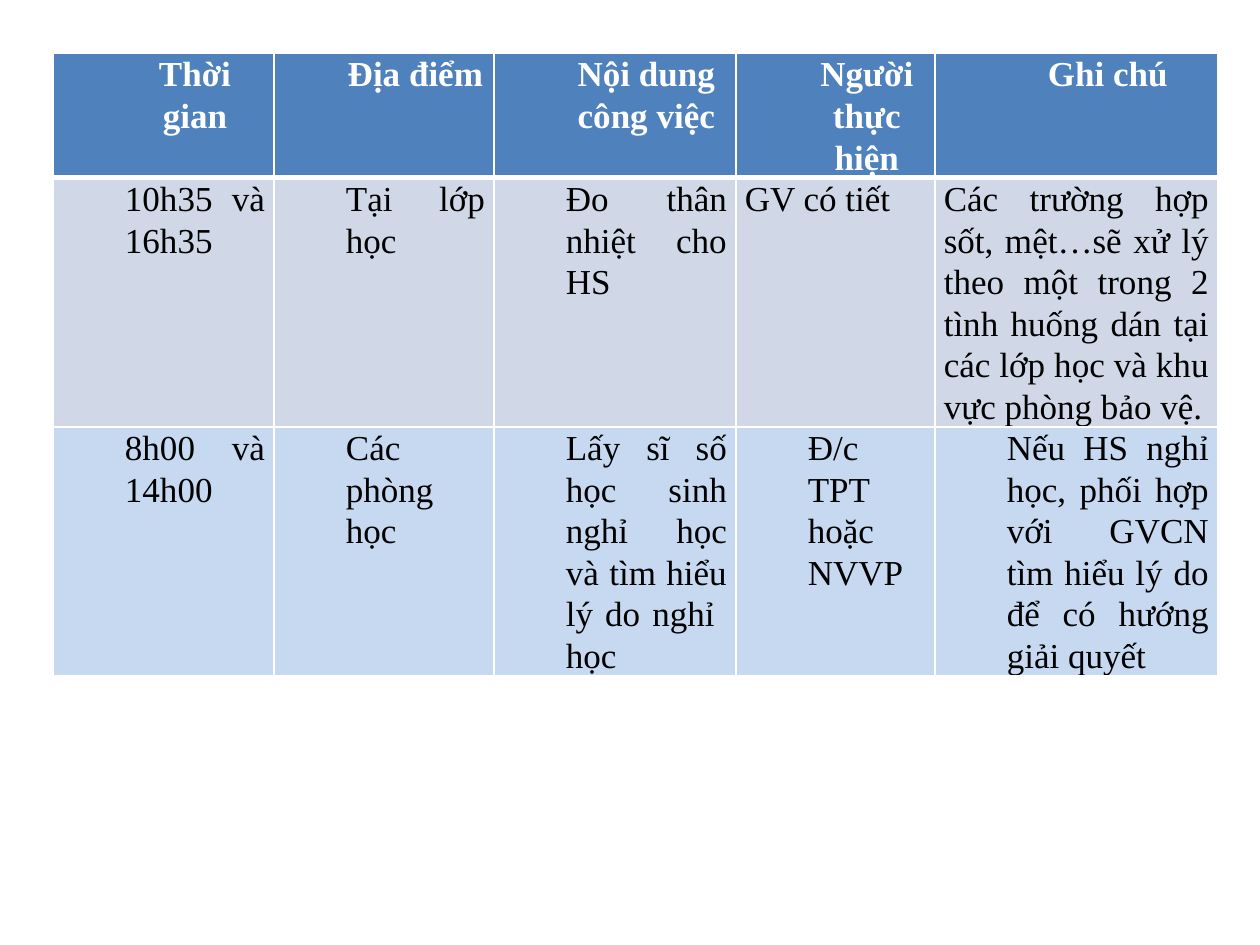
from lxml import etree
from pptx import Presentation
from pptx import util as u
from pptx.dml.color import RGBColor
from pptx.enum import text
from pptx.oxml import ns

PX = u.Inches(1) // 126
WHITE = RGBColor(0xFF, 0xFF, 0xFF)
BLACK = RGBColor(0, 0, 0)
HEADER_BLUE = RGBColor(0x4F, 0x81, 0xBD)
GREY_BLUE = RGBColor(0xD0, 0xD8, 0xE8)
PALE_BLUE = RGBColor(0xC6, 0xD9, 0xF1)

CENTER, JUSTIFY = text.PP_ALIGN.CENTER, text.PP_ALIGN.JUSTIFY
INDENT = 63
COLUMN_WIDTHS = [221, 220, 242, 199, 283]
ROW_HEIGHTS = [66, 52, 52]
ROW_FILLS = [HEADER_BLUE, GREY_BLUE, PALE_BLUE]
SCHEDULE = [
    ["Thời gian", "Địa điểm", "Nội dung công việc", "Người thực hiện", "Ghi chú"],
    ["10h35 và 16h35", "Tại lớp học", "Đo thân nhiệt cho HS", "GV có tiết",
     "Các trường hợp sốt, mệt…sẽ xử lý theo một trong 2 tình huống dán tại "
     "các lớp học và khu vực phòng bảo vệ."],
    ["8h00 và 14h00", "Các phòng học", "Lấy sĩ số học sinh nghỉ học và tìm hiểu lý do nghỉ  học",
     "Đ/c TPT hoặc NVVP",
     "Nếu HS nghỉ học, phối hợp với GVCN tìm hiểu lý do để có hướng giải quyết"],
]
# Cells without the usual indent: (row, column) -> alignment, spacing in points
FLUSH_CELLS = {(1, 3): (text.PP_ALIGN.LEFT, 0), (1, 4): (JUSTIFY, 3)}


class SlideBuilder:
    font = "Times New Roman"
    size = u.Pt(20)

    def __init__(self, slide):
        self.slide = slide

    def table(self, left, top, height, widths, heights):
        shape = self.slide.shapes.add_table(
            len(heights), len(widths), left * PX, top * PX, sum(widths) * PX, height * PX)
        for column, width in zip(shape.table.columns, widths):
            column.width = width * PX
        for row, row_height in zip(shape.table.rows, heights):
            row.height = row_height * PX
        shape.height = height * PX
        return shape.table

    def borders(self, cell, color, **widths):
        properties = cell._tc.get_or_add_tcPr()
        for side in "LRTB":
            line = etree.SubElement(properties, ns.qn(f"a:ln{side}"),
                                    w=str(u.Pt(widths.get(side, 1))))
            fill = etree.SubElement(line, ns.qn("a:solidFill"))
            etree.SubElement(fill, ns.qn("a:srgbClr"), val=str(color))

    def cell(self, cell, words, fill, color, bold, alignment, indent, spacing):
        cell.fill.solid()
        cell.fill.fore_color.rgb = fill
        cell.margin_left = cell.margin_right = 9 * PX
        cell.margin_top = cell.margin_bottom = 0
        paragraph = cell.text_frame.paragraphs[0]
        paragraph.alignment = alignment
        paragraph.line_spacing = 1.07
        paragraph.space_before = paragraph.space_after = u.Pt(spacing)
        paragraph._p.get_or_add_pPr().set("marL", str(indent * PX))
        run = paragraph.add_run()
        run.text = words
        run.font.name, run.font.size = self.font, self.size
        run.font.bold = bold
        run.font.color.rgb = color


def main():
    presentation = Presentation()
    presentation.slide_width, presentation.slide_height = 1260 * PX, 945 * PX
    builder = SlideBuilder(presentation.slides.add_slide(presentation.slide_layouts[6]))

    # Schedule table
    table = builder.table(53, 53, 674, COLUMN_WIDTHS, ROW_HEIGHTS)
    for i, (row, fill) in enumerate(zip(SCHEDULE, ROW_FILLS)):
        header = i == 0
        for j, words in enumerate(row):
            cell = table.cell(i, j)
            alignment, spacing = FLUSH_CELLS.get((i, j), (CENTER if header else JUSTIFY, 3))
            indent = 0 if (i, j) in FLUSH_CELLS else INDENT
            # Borders come before the fill in the cell properties
            builder.borders(cell, WHITE, B=3 if header else 1, T=3 if i == 1 else 1)
            builder.cell(cell, words, fill, WHITE if header else BLACK, header,
                         alignment, indent, spacing)

    presentation.save("out.pptx")


if __name__ == "__main__":
    main()
